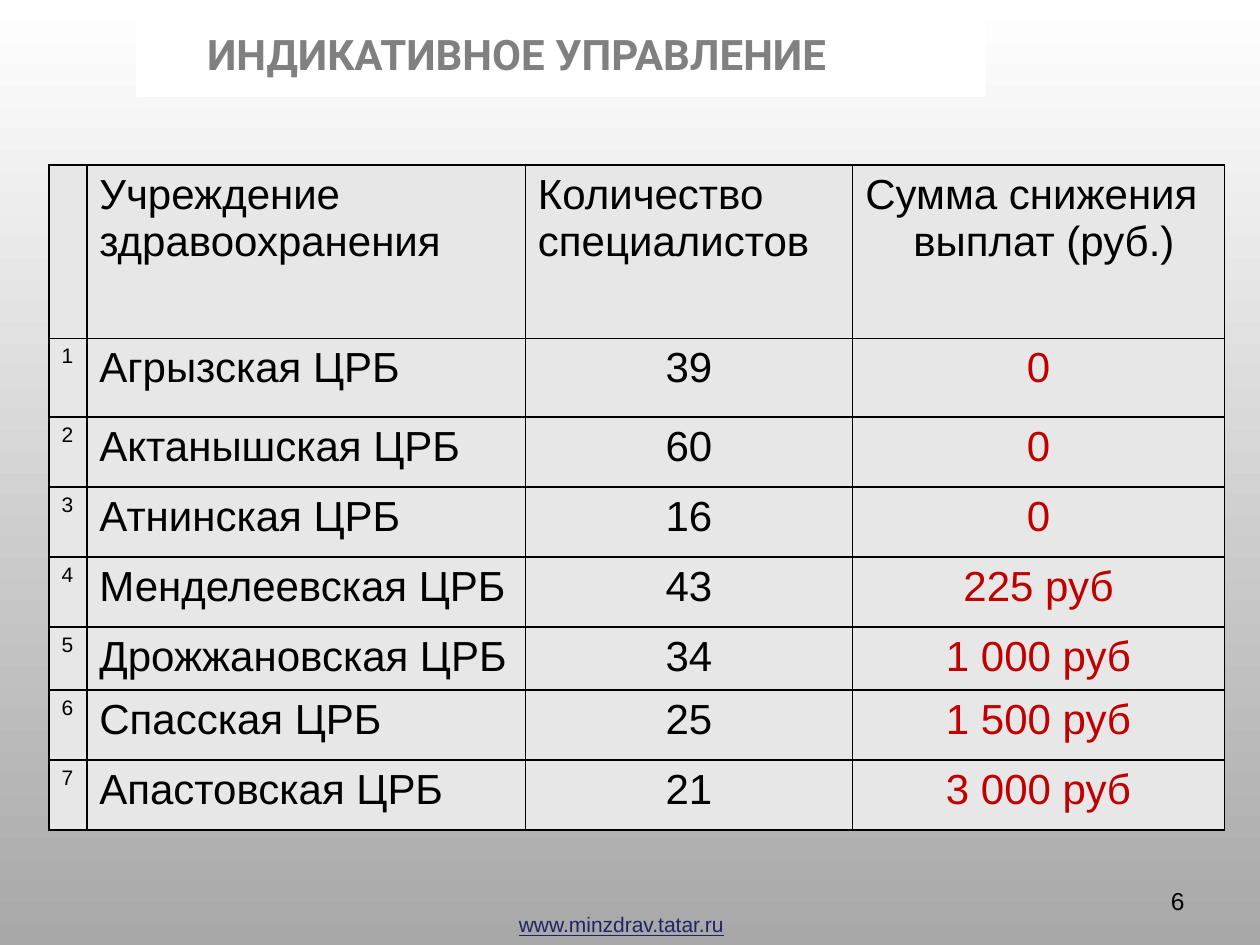
from pptx import Presentation
from pptx.dml.color import RGBColor as RGB
from pptx.enum.shapes import MSO_SHAPE as Shape
from pptx.enum.text import MSO_ANCHOR as Anchor, MSO_AUTO_SIZE as Fit, PP_ALIGN as Align
from pptx.oxml import parse_xml
from pptx.oxml.ns import nsdecls
from pptx.util import Cm, Pt

WHITE = RGB(0xFF, 0xFF, 0xFF)
BLACK = RGB(0, 0, 0)
GREY = RGB(0x80, 0x80, 0x80)
DARK = RGB(0xA8, 0xA8, 0xA8)
PALE = RGB(0xE7, 0xE7, 0xE7)
RED = RGB(0xC0, 0, 0)
NAVY = RGB(0x22, 0x22, 0x68)

HANG = 0.97
COLS = (0.76, 8.84, 6.6, 7.49)
ROWS = (3.49, 1.59, 1.41, 1.41, 1.41, 1.27, 1.41, 1.41)
HEADS = ("", "Учреждение здравоохранения", "Количество специалистов",
         "Сумма снижения выплат (руб.)")
DATA = (
    ("Агрызская ЦРБ", "39", "0"),
    ("Актанышская ЦРБ", "60", "0"),
    ("Атнинская ЦРБ", "16", "0"),
    ("Менделеевская ЦРБ", "43", "225 руб"),
    ("Дрожжановская ЦРБ", "34", "1 000 руб"),
    ("Спасская ЦРБ", "25", "1 500 руб"),
    ("Апастовская ЦРБ", "21", "3 000 руб"),
)


def write(frame, text, size=24, face="Arial", color=BLACK, bold=False,
          line=False, align=Align.LEFT, left=0, first=0):
    """Fill a text frame; left and first are indents in cm."""
    para = frame.paragraphs[0]
    para.alignment = align
    props = para._p.get_or_add_pPr()
    props.set("marL", str(Cm(left)))
    props.set("indent", str(Cm(first)))
    run = para.add_run()
    run.text = text
    font = run.font
    font.size, font.name, font.bold, font.underline = Pt(size), face, bold, line
    font.color.rgb = color


def place(shape, left, top, width, height):
    shape.left, shape.top = Cm(left), Cm(top)
    shape.width, shape.height = Cm(width), Cm(height)


def edge(cell):
    """Draw a thin black border on all four sides of a cell."""
    props = cell._tc.get_or_add_tcPr()
    for spot, side in enumerate(("lnL", "lnR", "lnT", "lnB")):
        props.insert(spot, parse_xml(
            f'<a:{side} {nsdecls("a")} w="{Pt(1)}"><a:solidFill>'
            f'<a:srgbClr val="{BLACK}"/></a:solidFill></a:{side}>'))


def paint(slide):
    """Shade the background from white at the top to grey at the bottom."""
    fill = slide.background.fill
    fill.gradient()
    fill.gradient_angle = 270
    for stop, color in zip(fill.gradient_stops, (WHITE, DARK)):
        stop.color.rgb = color


def header(slide, left, top, width, height):
    band = slide.shapes.add_shape(Shape.RECTANGLE, 0, 0, 0, 0)
    place(band, left, top, width, height)
    band.shadow.inherit = False
    band.fill.solid()
    band.fill.fore_color.rgb = WHITE
    band.line.color.rgb = WHITE
    band.line.width = Pt(2)
    title = slide.shapes.title
    title._element.addprevious(band._element)
    place(title, left + 0.15, top + 0.02, width - 1.88, height - 0.22)
    frame = title.text_frame
    frame.auto_size = Fit.NONE
    frame.word_wrap = False
    frame.vertical_anchor = Anchor.MIDDLE
    write(frame, "ИНДИКАТИВНОЕ УПРАВЛЕНИЕ", face="Roboto", color=GREY,
          bold=True, first=1)


def grid(slide, left, top):
    table = slide.shapes.add_table(
        len(ROWS), len(COLS), Cm(left), Cm(top), Cm(sum(COLS)), Cm(sum(ROWS))).table
    for col, width in zip(table.columns, COLS):
        col.width = Cm(width)
    for row, height in zip(table.rows, ROWS):
        row.height = Cm(height)
    lines = [HEADS] + [(str(n), *line) for n, line in enumerate(DATA, 1)]
    for r, line in enumerate(lines):
        for c, text in enumerate(line):
            cell = table.cell(r, c)
            cell.fill.solid()
            cell.fill.fore_color.rgb = PALE
            edge(cell)
            hang = HANG if r or c == 3 else 0
            write(cell.text_frame, text, size=24 if c else 12,
                  color=RED if r and c == 3 else BLACK,
                  align=Align.CENTER if r and c > 1 else Align.LEFT,
                  left=hang, first=-hang)


def label(slide, text, left, top, width, height, wrap=True, **style):
    box = slide.shapes.add_textbox(Cm(left), Cm(top), Cm(width), Cm(height))
    box.text_frame.word_wrap = wrap
    write(box.text_frame, text, **style)


def main():
    deck = Presentation()
    deck.slide_width, deck.slide_height = Cm(25.4), Cm(19.05)
    slide = deck.slides.add_slide(deck.slide_layouts[5])
    paint(slide)
    header(slide, 2.77, 0.41, 17.07, 1.52)
    grid(slide, 0.99, 3.33)
    label(slide, "www.minzdrav.tatar.ru", 10.21, 18.26, 4.67, 0.76, wrap=False,
          size=12, color=NAVY, line=True)
    label(slide, "6", 23.29, 17.73, 0.84, 1.32, size=14, align=Align.RIGHT)
    deck.save("out.pptx")


if __name__ == "__main__":
    main()
